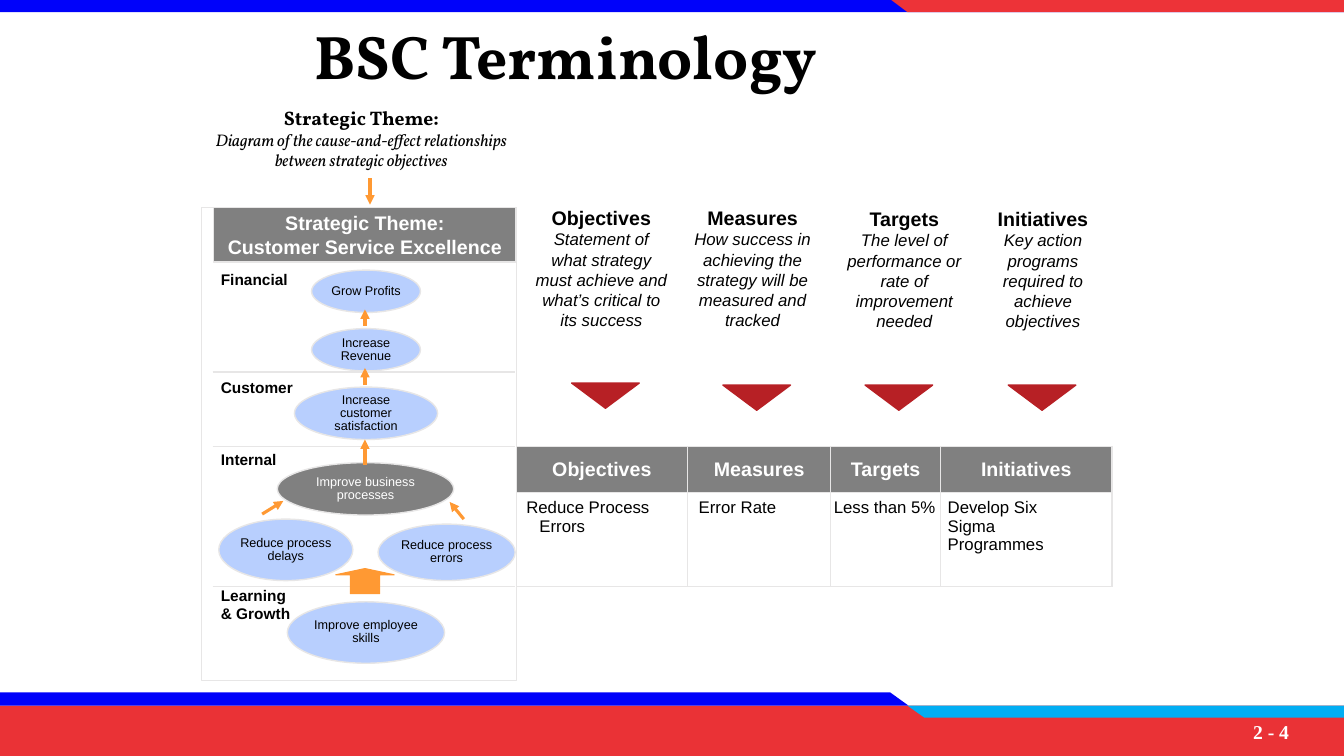
"""Build the BSC Terminology slide with its strategy map and scorecard table."""
import dataclasses
import typing

import lxml.etree
import pptx
import pptx.dml.color
import pptx.enum.shapes
import pptx.enum.text
import pptx.oxml.ns
import pptx.util

Inches = pptx.util.Inches
SHAPE = pptx.enum.shapes.MSO_SHAPE
ALIGN = pptx.enum.text.PP_ALIGN
ANCHOR = pptx.enum.text.MSO_ANCHOR
qn = pptx.oxml.ns.qn
Box = tuple[float, float, float, float]

COLORS = {
    "blue": "0002FA", "red": "EA3236", "cyan": "02AEF3", "scarlet": "ED3338",
    "gray": "808080", "border": "E7E6E6", "sky": "B8CFFE", "orange": "FF9933",
    "crimson": "B72025", "white": "FFFFFF", "black": "000000",
}


@dataclasses.dataclass
class Style:
    size: float
    color: str = "black"
    name: str = "Arial"
    bold: bool = False
    italic: bool = False


@dataclasses.dataclass
class Goal:
    text: str
    box: Box
    fill: str = "sky"
    color: str = "black"


@dataclasses.dataclass
class Column:
    name: str
    left: float
    width: float
    definition: str
    caption: Box
    triangle: tuple[float, float]
    value: str
    margins: tuple[float, float]
    hang: float = 0


HEADING = Style(14, bold=True)
WHITE_HEADING = Style(14, "white", bold=True)
BODY = Style(12)
DEFINITION = Style(12, italic=True)
PANEL = (2, 2.06, 3.12, 4.69)
TABLE_TOP, HEAD_H, ROW_H = 4.43, 0.46, 0.93

BANDS = [
    ("scarlet", [(8.84, 0), (13.33, 0), (13.33, 0.12), (9, 0.12)]),
    ("blue", [(0, 6.87), (8.83, 6.87), (9.01, 7), (0, 7)]),
    ("cyan", [(9, 7), (13.33, 7), (13.33, 7.12), (9.17, 7.12)]),
]
COLUMNS = [
    Column("Objectives", 5.12, 1.7,
           "Statement of what strategy must achieve and what’s critical to its success",
           (5.21, 1.99, 1.51, 1.34), (5.67, 3.8), "Reduce Process Errors", (0.1, 0.2), 0.13),
    Column("Measures", 6.82, 1.42,
           "How success in achieving the strategy will be measured and tracked",
           (6.68, 1.99, 1.57, 1.34), (7.17, 3.82), "Error Rate", (0.11, 0.05)),
    Column("Targets", 8.24, 1.09,
           "The level of performance or rate of improvement needed",
           (8.2, 2, 1.54, 1.34), (8.58, 3.82), "Less than 5%", (0.03, 0)),
    Column("Initiatives", 9.33, 1.7,
           "Key action programs required to achieve objectives",
           (9.63, 2, 1.43, 1.34), (10, 3.82), "Develop Six Sigma Programmes", (0.07, 0.3)),
]
PERSPECTIVES = [("Financial", 2.68, 0.18), ("Customer", 3.75, 0.18),
                ("Internal", 4.47, 0.18), ("Learning & Growth", 5.81, 0.37)]
GOALS = [
    Goal("Grow Profits", (3.09, 2.68, 1.08, 0.42)),
    Goal("Increase Revenue", (3.09, 3.26, 1.08, 0.42)),
    Goal("Increase customer satisfaction", (2.92, 3.84, 1.42, 0.52)),
    Goal("Reduce process delays", (2.17, 5.15, 1.33, 0.61)),
    Goal("Reduce process errors", (3.75, 5.2, 1.36, 0.56)),
    Goal("Improve business processes", (2.75, 4.59, 1.75, 0.52), "gray", "white"),
    Goal("Improve employee skills", (2.85, 5.97, 1.56, 0.61)),
]
ARROWS = [(3.67, 1.77, 3.67, 2.03), (3.62, 3.82, 3.62, 3.65), (3.62, 3.23, 3.62, 3.07),
          (3.62, 4.61, 3.62, 4.36), (2.6, 5.1, 2.81, 4.97), (4.6, 5.15, 4.46, 4.98)]


def rgb(color: str) -> pptx.dml.color.RGBColor:
    return pptx.dml.color.RGBColor.from_string(COLORS[color])


def write(tf: typing.Any, lines: list[tuple[str, Style]], align: typing.Any = ALIGN.CENTER,
          anchor: typing.Any = ANCHOR.TOP, insets: tuple[float, float] = (0.1, 0.05),
          spacing: float = 1) -> None:
    x, y = map(Inches, insets)
    frame = {"word_wrap": True, "vertical_anchor": anchor, "margin_left": x,
             "margin_right": x, "margin_top": y, "margin_bottom": y}
    for key, value in frame.items():
        setattr(tf, key, value)
    for i, (text, style) in enumerate(lines):
        p = tf.add_paragraph() if i else tf.paragraphs[0]
        p.alignment, p.line_spacing = align, spacing
        r = p.add_run()
        r.text = text
        values = {"size": pptx.util.Pt(style.size), "name": style.name,
                  "bold": style.bold, "italic": style.italic}
        for key, value in values.items():
            setattr(r.font, key, value)
        r.font.color.rgb = rgb(style.color)


def paint(sp: typing.Any, fill: str, line: str | None = None, width: float = 1) -> None:
    sp.shadow.inherit = False
    sp.fill.solid()
    sp.fill.fore_color.rgb = rgb(fill)
    if line:
        sp.line.color.rgb = rgb(line)
        sp.line.width = pptx.util.Pt(width)
    else:
        sp.line.fill.background()


def add_block(s: typing.Any, kind: typing.Any, box: Box, fill: str,
              line: str | None = None, width: float = 1) -> typing.Any:
    sp = s.shapes.add_shape(kind, *map(Inches, box))
    paint(sp, fill, line, width)
    return sp


def add_text(s: typing.Any, box: Box, lines: list[tuple[str, Style]], **layout: typing.Any) -> None:
    write(s.shapes.add_textbox(*map(Inches, box)).text_frame, lines, **layout)


def add_line(s: typing.Any, ends: Box, color: str, width: float, arrow: bool = False) -> None:
    line = s.shapes.add_connector(pptx.enum.shapes.MSO_CONNECTOR.STRAIGHT, *map(Inches, ends))
    line.line.color.rgb = rgb(color)
    line.line.width = pptx.util.Pt(width)
    if arrow:
        lxml.etree.SubElement(line.line._get_or_add_ln(), qn("a:tailEnd"), type="triangle")
    lxml.etree.SubElement(line._element.spPr, qn("a:effectLst"))


def fill_cell(cell: typing.Any, fill: str) -> None:
    tc_pr = cell._tc.get_or_add_tcPr()
    for side in ("a:lnL", "a:lnR", "a:lnT", "a:lnB"):
        ln = lxml.etree.SubElement(tc_pr, qn(side), w=str(pptx.util.Pt(1)))
        solid = lxml.etree.SubElement(ln, qn("a:solidFill"))
        lxml.etree.SubElement(solid, qn("a:srgbClr"), val=COLORS["border"])
    cell.fill.solid()
    cell.fill.fore_color.rgb = rgb(fill)


def add_scorecard(s: typing.Any) -> None:
    box = (COLUMNS[0].left, TABLE_TOP, sum(c.width for c in COLUMNS), HEAD_H + ROW_H)
    table = s.shapes.add_table(2, len(COLUMNS), *map(Inches, box)).table
    table.first_row = table.horz_banding = False
    table.rows[0].height, table.rows[1].height = Inches(HEAD_H), Inches(ROW_H)
    for i, column in enumerate(COLUMNS):
        table.columns[i].width = Inches(column.width)
        head, body = table.cell(0, i), table.cell(1, i)
        fill_cell(head, "gray")
        fill_cell(body, "white")
        write(head.text_frame, [(column.name, WHITE_HEADING)])
        head.vertical_anchor = ANCHOR.MIDDLE
        write(body.text_frame, [(column.value, BODY)], ALIGN.LEFT)
        body.margin_left, body.margin_right = map(Inches, column.margins)
        p_pr = body.text_frame.paragraphs[0]._p.get_or_add_pPr()
        p_pr.set("marL", str(Inches(column.hang)))
        p_pr.set("indent", str(-Inches(column.hang)))


def add_strategy_map(s: typing.Any) -> None:
    add_block(s, SHAPE.RECTANGLE, PANEL, "white", "border")
    for y in (3.69, 4.43, 5.82):
        add_line(s, (2.11, y, 5.11, y), "border", 1)
    sp = add_block(s, SHAPE.RECTANGLE, (2.12, 2.06, 3, 0.54), "gray", "border")
    write(sp.text_frame, [("Strategic Theme:", WHITE_HEADING),
                          ("Customer Service Excellence", WHITE_HEADING)],
          anchor=ANCHOR.MIDDLE, insets=(0.05, 0.05))
    for text, top, height in PERSPECTIVES:
        add_text(s, (2.19, top, 0.78, height), [(text, Style(11, bold=True))],
                 align=ALIGN.LEFT, anchor=ANCHOR.MIDDLE, insets=(0, 0))
    for goal in GOALS:
        sp = add_block(s, SHAPE.OVAL, goal.box, goal.fill, "border")
        write(sp.text_frame, [(goal.text, Style(9, goal.color))],
              anchor=ANCHOR.MIDDLE, insets=(0, 0.06), spacing=0.85)
    for ends in ARROWS:
        add_line(s, ends, "orange", 2.25, arrow=True)
    sp = add_block(s, SHAPE.UP_ARROW, (3.33, 5.64, 0.58, 0.25), "orange", "orange", 0.75)
    sp.adjustments[0], sp.adjustments[1] = 0.5, 0.25


def main() -> None:
    prs = pptx.Presentation()
    prs.slide_width, prs.slide_height = Inches(13.33), Inches(7.5)
    s = prs.slides.add_slide(prs.slide_layouts[5])
    add_block(s, SHAPE.RECTANGLE, (0, 0, 13.33, 0.12), "blue")
    add_block(s, SHAPE.RECTANGLE, (0, 7, 13.33, 0.5), "red")
    for color, points in BANDS:
        start, *rest = [(Inches(x), Inches(y)) for x, y in points]
        paint(s.shapes.build_freeform(*start).add_line_segments(rest).convert_to_shape(), color)
    add_text(s, (12.33, 7.09, 1, 0.34),
             [("2 - 4", Style(14, "white", "Times New Roman", True))], align=ALIGN.LEFT)
    title = s.shapes.title
    title.left, title.top, title.width, title.height = map(Inches, (0.32, 0.16, 10.59, 0.87))
    write(title.text_frame, [("BSC Terminology", Style(44, name="Vollkorn", bold=True))],
          anchor=ANCHOR.MIDDLE, spacing=0.9)
    add_scorecard(s)
    add_strategy_map(s)
    add_text(s, (1.92, 1, 3.33, 0.74), [
        ("Strategic Theme:", Style(14, name="Vollkorn", bold=True)),
        ("Diagram of the cause-and-effect relationships between strategic objectives",
         Style(12, name="Vollkorn", italic=True))])
    for column in COLUMNS:
        add_text(s, column.caption, [(column.name, HEADING), (column.definition, DEFINITION)])
        sp = add_block(s, SHAPE.ISOSCELES_TRIANGLE, (*column.triangle, 0.67, 0.25),
                       "crimson", "crimson")
        sp.rotation = 180
    prs.save("out.pptx")


if __name__ == "__main__":
    main()
